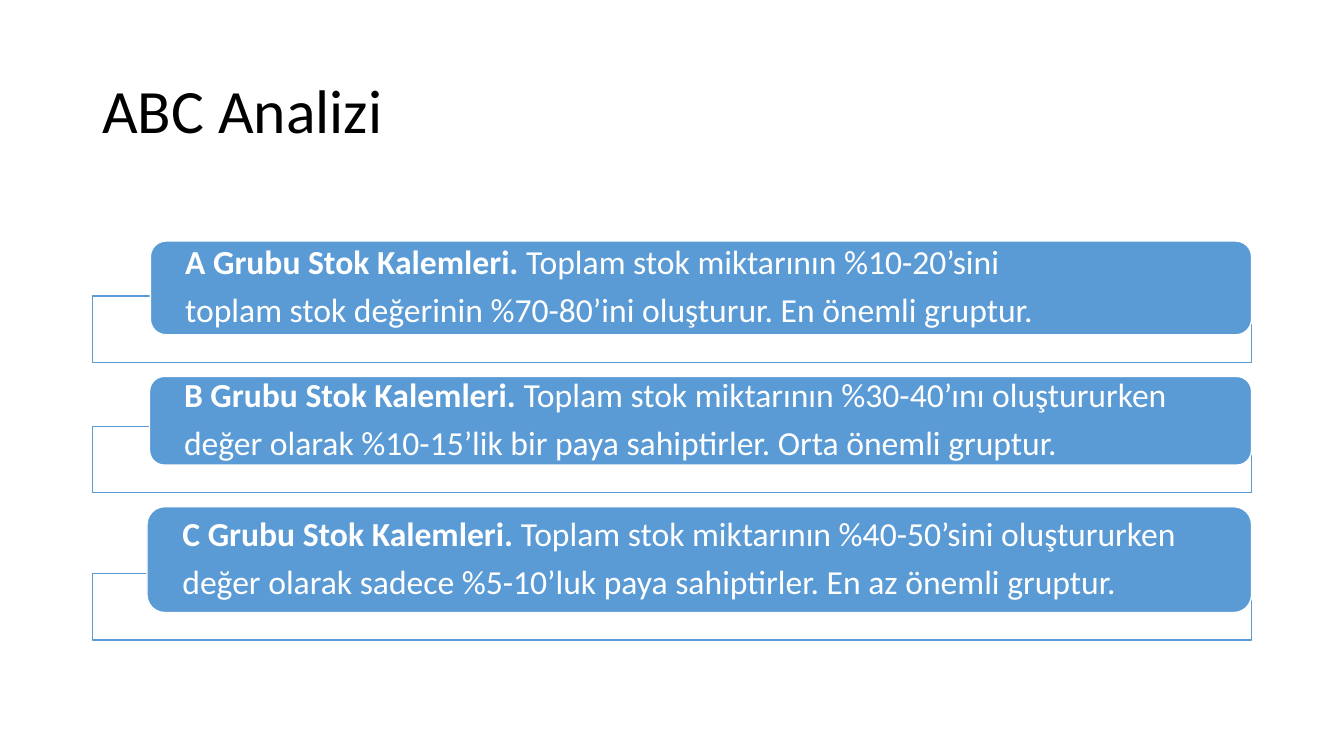
"""Build the ABC analysis slide: a title above three stacked stock groups."""
from dataclasses import dataclass

from lxml import etree
from pptx import Presentation
from pptx.dml.color import RGBColor
from pptx.enum.shapes import MSO_SHAPE
from pptx.enum.text import MSO_ANCHOR, PP_ALIGN
from pptx.oxml.ns import qn
from pptx.util import Inches, Pt

FRAME_SHAPE = MSO_SHAPE.RECTANGLE
BAR_SHAPE = MSO_SHAPE.ROUNDED_RECTANGLE
MIDDLE = MSO_ANCHOR.MIDDLE
LEFT = PP_ALIGN.LEFT

WIDTH, HEIGHT = Inches(13.33), Inches(7.5)
COLUMN, ROW = WIDTH / 160, HEIGHT / 90
MARGIN, RIGHT_EDGE = 11, 149
FIRST_TOP = 28.7
FRAME_HEIGHT, FRAME_DROP, GROUP_GAP = 7.92, 3.3, 1.65
FONT, BLUE, WHITE, BLACK = "Calibri", "5B9BD5", "FFFFFF", "000000"
FRAME_ALPHA = "90000"
BAR_TEXT = {"margin_left": Inches(0.3), "margin_right": Inches(0.3),
            "margin_top": 0, "margin_bottom": 0}


@dataclass
class StockGroup:
    """A stock group: bar start column, bar rows and wording."""
    left: float
    rows: float
    heading: str
    first_line: str
    second_line: str


GROUPS = [
    StockGroup(17.9, 11.16, "A Grubu Stok Kalemleri. ",
               "Toplam stok miktarının %10-20’sini",
               "toplam stok değerinin %70-80’ini oluşturur. En önemli gruptur."),
    StockGroup(17.8, 10.56, "B Grubu Stok Kalemleri. ",
               "Toplam stok miktarının %30-40’ını oluştururken",
               "değer olarak %10-15’lik bir paya sahiptirler. Orta önemli gruptur."),
    StockGroup(17.5, 12.6, "C Grubu Stok Kalemleri. ",
               "Toplam stok miktarının %40-50’sini oluştururken",
               "değer olarak sadece %5-10’luk paya sahiptirler. En az önemli gruptur."),
]


def colour(hex_code: str) -> RGBColor:
    """Turn a hex string into a colour."""
    return RGBColor.from_string(hex_code)


def place(left: float, top: float, right: float, rows: float) -> tuple:
    """Turn grid positions into left, top, width and height."""
    return (round(left * COLUMN), round(top * ROW),
            round((right - left) * COLUMN), round(rows * ROW))


def add_box(slide, kind, area: tuple, fill: str, outline: str):
    """Draw a filled, outlined shape without shadow."""
    box = slide.shapes.add_shape(kind, *area)
    box.shadow.inherit = False
    box.fill.solid()
    box.fill.fore_color.rgb = colour(fill)
    box.line.color.rgb = colour(outline)
    box.line.width = Pt(1)
    return box


def write(frame, lines: list, size: int, ink: str, formats: dict) -> None:
    """Write paragraphs of (wording, bold) runs into a text frame."""
    settings = {"word_wrap": True, "vertical_anchor": MIDDLE, **formats}
    for name, value in settings.items():
        setattr(frame, name, value)
    for index, runs in enumerate(lines):
        paragraph = frame.add_paragraph() if index else frame.paragraphs[0]
        spacing = {"alignment": LEFT, "line_spacing": 0.9, "space_after": Pt(0.35 * size)}
        for name, value in spacing.items():
            setattr(paragraph, name, value)
        for wording, bold in runs:
            run = paragraph.add_run()
            run.text = wording
            for name, value in {"name": FONT, "size": Pt(size), "bold": bold}.items():
                setattr(run.font, name, value)
            run.font.color.rgb = colour(ink)


def add_group(slide, group: StockGroup, top: float) -> float:
    """Draw a group's frame and bar, and return the top of the next group."""
    bottom = top + group.rows + FRAME_DROP
    frame = add_box(slide, FRAME_SHAPE,
                    place(MARGIN, bottom - FRAME_HEIGHT, RIGHT_EDGE, FRAME_HEIGHT),
                    WHITE, BLUE)
    fill_colour = frame.fill._xPr.find(qn("a:solidFill"))[0]
    etree.SubElement(fill_colour, qn("a:alpha"), val=FRAME_ALPHA)
    bar = add_box(slide, BAR_SHAPE, place(group.left, top, RIGHT_EDGE, group.rows),
                  BLUE, WHITE)
    lines = [[(group.heading, True), (group.first_line, False)],
             [(group.second_line, False)]]
    write(bar.text_frame, lines, 24, WHITE, BAR_TEXT)
    return bottom + GROUP_GAP


def main() -> None:
    """Build and save the slide."""
    deck = Presentation()
    deck.slide_width, deck.slide_height = WIDTH, HEIGHT
    slide = deck.slides.add_slide(deck.slide_layouts[6])
    title = slide.shapes.add_textbox(*place(MARGIN, 4.8, RIGHT_EDGE, 17.4))
    write(title.text_frame, [[("ABC Analizi", False)]], 44, BLACK, {})
    top = FIRST_TOP
    for group in GROUPS:
        top = add_group(slide, group, top)
    deck.save("out.pptx")


if __name__ == "__main__":
    main()
